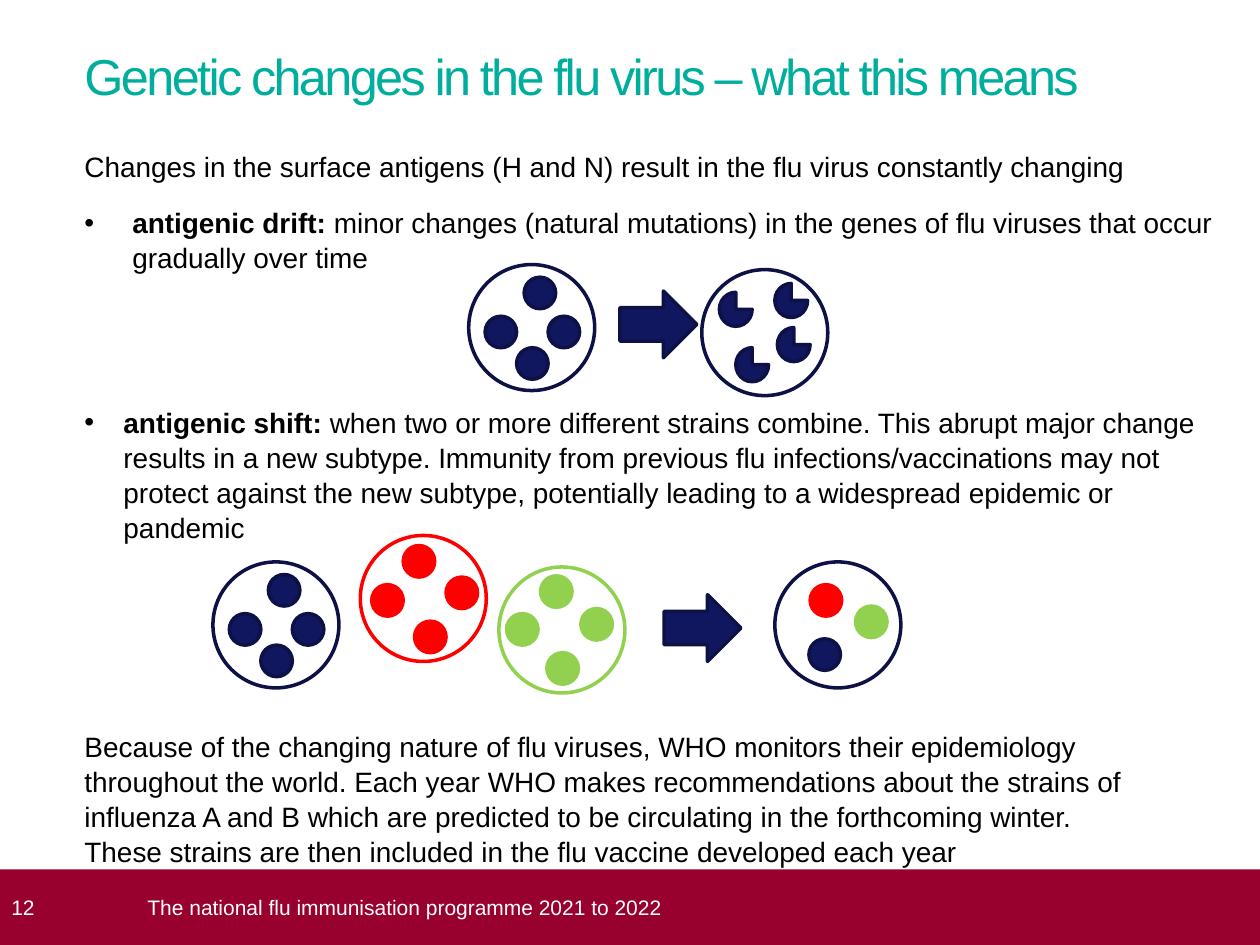
from lxml import etree
from pptx import Presentation
from pptx.dml.color import RGBColor
from pptx.enum import shapes, text
from pptx.oxml import ns
from pptx.util import Inches, Pt

FONT = "Arial"
NAVY, NAVY_EDGE = "11175E", "0D1146"
RED, GREEN = "FF0000", "92D050"
TEAL, MAROON, BLACK, WHITE = "00AE9E", "98002E", "000000", "FFFFFF"
EDGES = {NAVY: NAVY_EDGE, RED: RED, GREEN: GREEN}
PRESET = shapes.MSO_SHAPE

DRIFT = "minor changes (natural mutations) in the genes of flu viruses that occur gradually over time"
SHIFT = (
    "when two or more different strains combine. This abrupt major change results in a new subtype. "
    "Immunity from previous flu infections/vaccinations may not protect against the new subtype, "
    "potentially leading to a widespread epidemic or pandemic"
)
MONITORING = (
    "Because of the changing nature of flu viruses, WHO monitors their epidemiology throughout the world. "
    "Each year WHO makes recommendations about the strains of influenza A and B which are predicted to be "
    "circulating in the forthcoming winter. \vThese strains are then included in the flu vaccine developed each year"
)
PARAGRAPHS = [
    ("", "Changes in the surface antigens (H and N) result in the flu virus constantly changing", 0, 0),
    ("antigenic drift: ", DRIFT, 12, 0.38),
    ("antigenic shift: ", SHIFT, 74, 0.31),
    ("", MONITORING, 105.5, 0),
]

NAVY_SPOTS = [(0.13, 0.41), (0.38, 0.66), (0.63, 0.41), (0.44, 0.1)]
RED_SPOTS = [(0.09, 0.39), (0.43, 0.68), (0.68, 0.33), (0.34, 0.08)]
GREEN_SPOTS = [(0.06, 0.37), (0.38, 0.68), (0.65, 0.33), (0.33, 0.07)]
MUTATED_SPOTS = [(0.14, 0.18), (0.27, 0.62), (0.58, 0.11), (0.6, 0.46)]
MIXED_SPOTS = [(0.28, 0.18, RED), (0.27, 0.61, NAVY), (0.64, 0.35, GREEN)]


def rgb(value):
    return RGBColor.from_string(value)


def place(item, left, top, width, height):
    item.left, item.top = Inches(left), Inches(top)
    item.width, item.height = Inches(width), Inches(height)


def set_frame(frame, anchor, left=0, right=0):
    frame.word_wrap = True
    frame.auto_size = text.MSO_AUTO_SIZE.NONE
    frame.vertical_anchor = anchor
    frame.margin_left, frame.margin_right = Inches(left), Inches(right)
    frame.margin_top = frame.margin_bottom = 0


def style(paragraph, size, colour):
    paragraph.alignment = text.PP_ALIGN.LEFT
    paragraph.font.name = FONT
    paragraph.font.size = Pt(size)
    paragraph.font.color.rgb = rgb(colour)


def set_bullet(paragraph, indent):
    properties = paragraph._p.get_or_add_pPr()
    properties.set("marL", str(Inches(indent)))
    properties.set("indent", str(-Inches(indent)))
    if indent:
        etree.SubElement(properties, ns.qn("a:buFont"), typeface=FONT)
        etree.SubElement(properties, ns.qn("a:buChar"), char="•")
    else:
        etree.SubElement(properties, ns.qn("a:buNone"))


def add_title(slide):
    title = slide.shapes.title
    place(title, 0.67, 0.36, 8.78, 0.63)
    set_frame(title.text_frame, text.MSO_ANCHOR.TOP)
    heading = title.text_frame.paragraphs[0]
    heading.text = "Genetic changes in the flu virus – what this means"
    style(heading, 28.8, TEAL)
    heading.runs[0].font._element.set("spc", "-150")


def add_body(slide):
    body = slide.placeholders[1]
    place(body, 0.67, 1.18, 8.98, 5.8)
    frame = body.text_frame
    set_frame(frame, text.MSO_ANCHOR.TOP)
    for number, (term, words, space, indent) in enumerate(PARAGRAPHS):
        paragraph = frame.add_paragraph() if number else frame.paragraphs[0]
        paragraph.text = term or words
        if term:
            paragraph.runs[0].font.bold = True
            paragraph.add_run().text = words
        paragraph.line_spacing = 1.04
        paragraph.space_before = Pt(space)
        set_bullet(paragraph, indent)
        style(paragraph, 16, BLACK)


def add_preset(slide, preset, left, top, width, height, fill=None, edge=None):
    shape = slide.shapes.add_shape(preset, Inches(left), Inches(top), Inches(width), Inches(height))
    shape.shadow.inherit = False
    if fill:
        shape.fill.solid()
        shape.fill.fore_color.rgb = rgb(fill)
    else:
        shape.fill.background()
    if edge:
        shape.line.color.rgb = rgb(edge)
        shape.line.width = Pt(2)
    else:
        shape.line.fill.background()
    return shape


def add_virus(slide, left, top, colour, spots, antigen=PRESET.FLOWCHART_CONNECTOR, size=(0.25, 0.25)):
    add_preset(slide, PRESET.OVAL, left, top, 1, 1, edge=EDGES[colour])
    for x, y, *own in spots:
        fill = own[0] if own else colour
        add_preset(slide, antigen, left + x, top + y, *size, fill, EDGES[fill])


def add_arrow(slide, left, top):
    add_preset(slide, PRESET.RIGHT_ARROW, left, top, 0.61, 0.53, NAVY, NAVY_EDGE)


def add_footer(slide):
    band = add_preset(slide, PRESET.RECTANGLE, 0, 6.9, 10, 0.6, MAROON)
    caption = slide.shapes.add_textbox(Inches(0.98), Inches(6.9), Inches(8.82), Inches(0.6))
    for holder, words, inset in (
        (band, "12", 0.09),
        (caption, "The national flu immunisation programme 2021 to 2022", 0.19),
    ):
        set_frame(holder.text_frame, text.MSO_ANCHOR.MIDDLE, inset, 0.1)
        paragraph = holder.text_frame.paragraphs[0]
        paragraph.text = words
        style(paragraph, 12, WHITE)


def main():
    deck = Presentation()
    deck.slide_width, deck.slide_height = Inches(10), Inches(7.5)
    slide = deck.slides.add_slide(deck.slide_layouts[1])
    add_title(slide)
    add_body(slide)
    add_footer(slide)

    add_virus(slide, 3.72, 2.1, NAVY, NAVY_SPOTS)
    add_arrow(slide, 4.92, 2.31)
    add_virus(slide, 5.57, 2.14, NAVY, MUTATED_SPOTS, PRESET.PIE, (0.26, 0.27))

    add_virus(slide, 1.69, 4.46, NAVY, NAVY_SPOTS)
    add_virus(slide, 2.86, 4.25, RED, RED_SPOTS)
    add_virus(slide, 3.96, 4.5, GREEN, GREEN_SPOTS)
    add_arrow(slide, 5.27, 4.72)
    add_virus(slide, 6.15, 4.46, NAVY, MIXED_SPOTS)
    deck.save("out.pptx")


if __name__ == "__main__":
    main()
